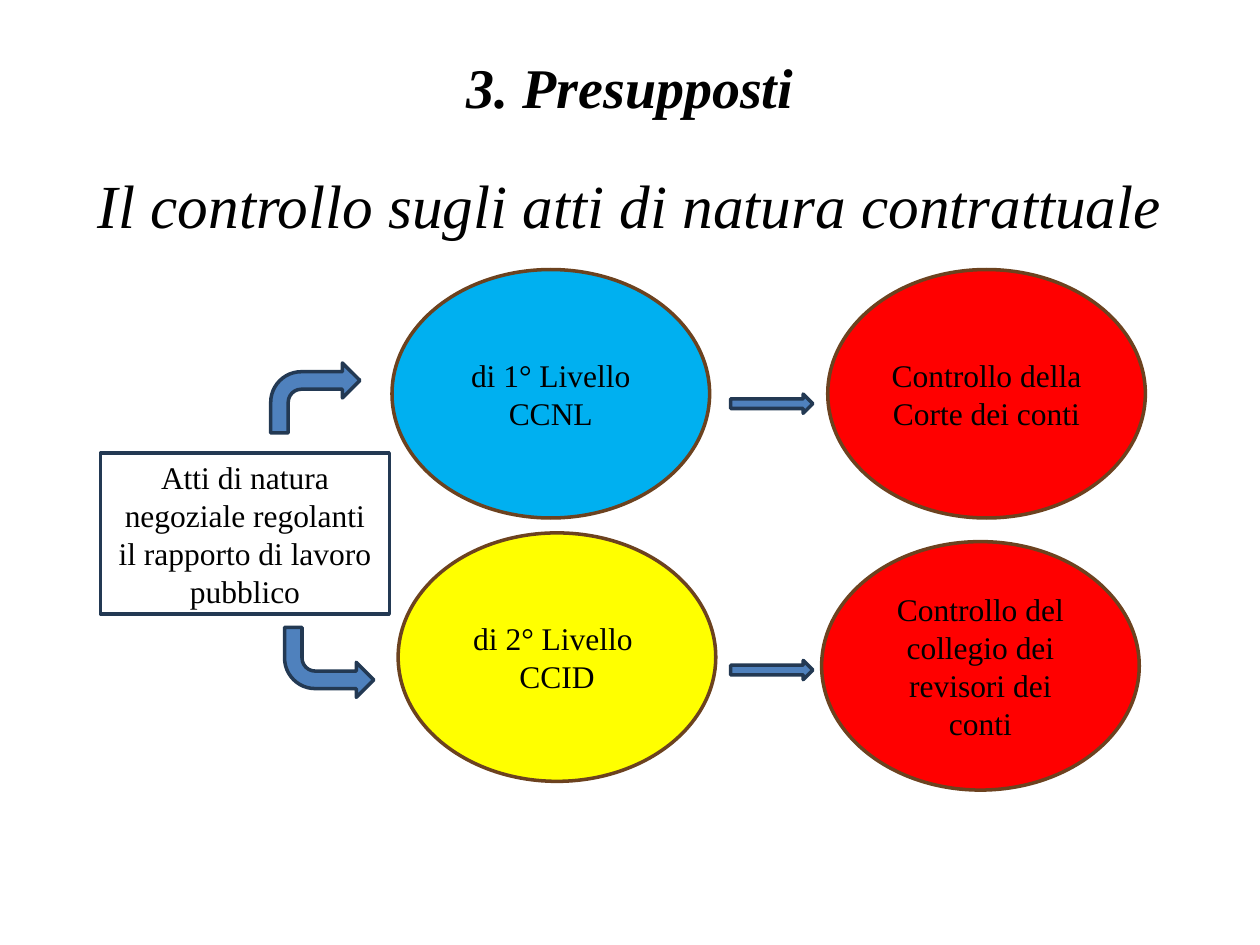
from pptx import Presentation
from pptx.util import Pt
from pptx.dml.color import RGBColor
from pptx.enum.shapes import MSO_SHAPE as SHAPE
from pptx.enum.text import MSO_ANCHOR as ANCHOR, PP_ALIGN as ALIGN

FONT = "Times New Roman"
BROWN, NAVY, BLUE, RED = "6C421F", "233953", "4F81BD", "FF0000"


def rgb(value):
    return RGBColor.from_string(value)


def write(sp, text, size=18, bold=False, italic=False, anchor=ANCHOR.MIDDLE):
    tf = sp.text_frame
    tf.word_wrap = True
    tf.vertical_anchor = anchor
    for i, line in enumerate(text.split("\n")):
        p = tf.add_paragraph() if i else tf.paragraphs[0]
        p.alignment = ALIGN.CENTER
        r = p.add_run()
        r.text = line
        r.font.name, r.font.size = FONT, Pt(size)
        r.font.bold, r.font.italic = bold, italic
        r.font.color.rgb = rgb("000000")


def add_heading(s, box, text, **fmt):
    write(s.shapes.add_textbox(*map(Pt, box)), text, **fmt)


def add_shape(s, kind, box, line, fill=None):
    sp = s.shapes.add_shape(kind, *map(Pt, box))
    sp.shadow.inherit = False
    if fill:
        sp.fill.solid()
        sp.fill.fore_color.rgb = rgb(fill)
    else:
        sp.fill.background()
    sp.line.color.rgb = rgb(line)
    sp.line.width = Pt(2)
    return sp


def add_ellipse(s, left, top, fill, text):
    write(add_shape(s, SHAPE.OVAL, (left, top, 181.5, 142), BROWN, fill), text)


def add_arrow(s, kind, box, flip=False):
    sp = add_shape(s, kind, box, NAVY, BLUE)
    if flip:
        sp.element.spPr.xfrm.set("flipV", "1")


def main():
    prs = Presentation()
    prs.slide_width, prs.slide_height = Pt(720), Pt(540)
    s = prs.slides.add_slide(prs.slide_layouts[6])

    add_heading(s, (36, 21.5, 648, 55.5), "3. Presupposti",
                size=32, bold=True, italic=True)
    add_heading(s, (36, 92, 648, 390),
                "Il controllo sugli atti di natura contrattuale",
                size=35, italic=True, anchor=ANCHOR.TOP)

    for left, top, fill, text in (
        (224, 154, "00B0F0", "di 1° Livello\nCCNL"),
        (227.5, 304.5, "FFFF00", "di 2° Livello \nCCID"),
        (473, 154, RED, "Controllo della Corte dei conti"),
        (469.5, 309.5, RED, "Controllo del collegio dei revisori dei conti"),
    ):
        add_ellipse(s, left, top, fill, text)

    for top in (225.2, 377.4):
        add_arrow(s, SHAPE.RIGHT_ARROW, (417.5, top, 47, 11))

    acts = add_shape(s, SHAPE.RECTANGLE, (57.5, 259, 165, 92), NAVY)
    write(acts, "Atti di natura negoziale regolanti il rapporto di lavoro pubblico")

    add_arrow(s, SHAPE.BENT_ARROW, (154.7, 207.4, 51, 40))
    add_arrow(s, SHAPE.BENT_ARROW, (162.6, 358.5, 51, 40), flip=True)

    prs.save("out.pptx")


if __name__ == "__main__":
    main()
